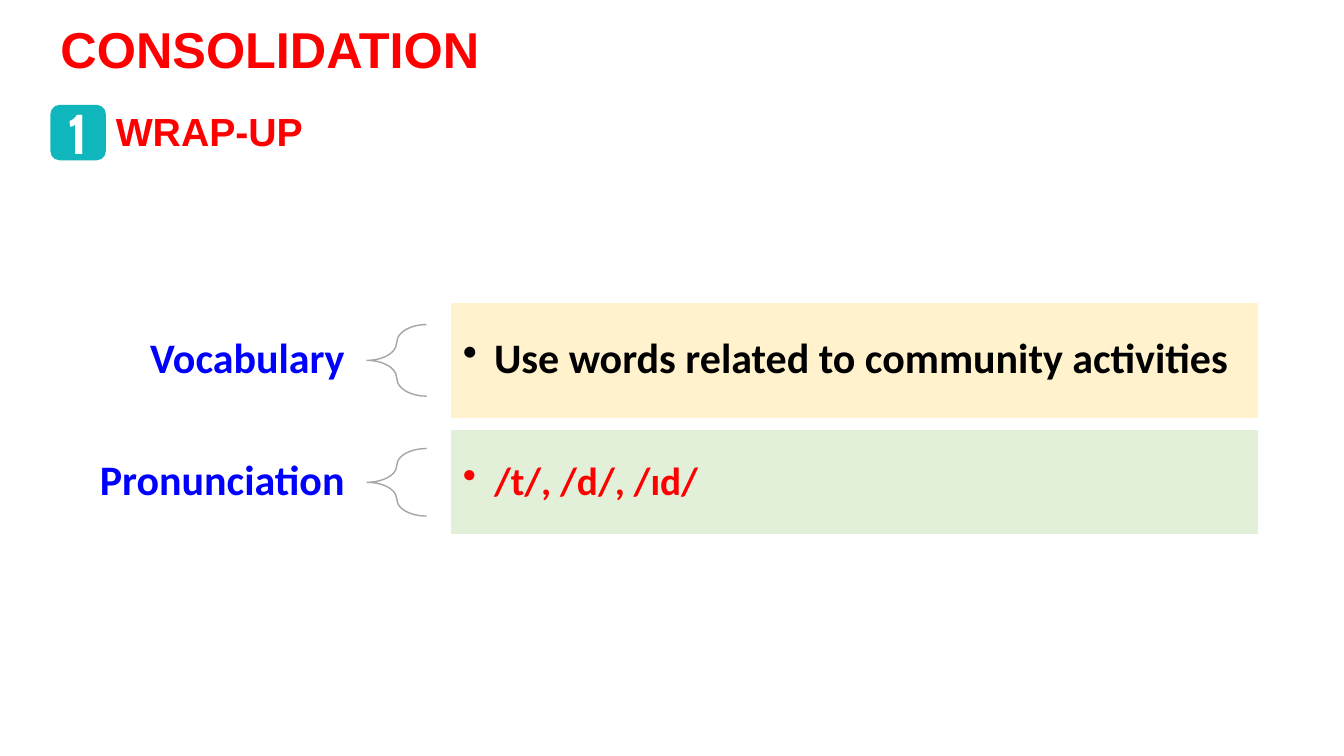
from lxml import etree
from pptx import Presentation
from pptx import util as u
from pptx.dml.color import RGBColor
from pptx.enum import shapes, text
from pptx.oxml.ns import qn

PX = 9144
COLOURS = {
    "red": "FF0000", "blue": "0000FF", "black": "000000", "white": "FFFFFF",
    "teal": "0FB7BD", "grey": "A5A5A5", "cream": "FFF2CC", "mint": "E2F0D9",
}
LEFT, CENTER, RIGHT = text.PP_ALIGN.LEFT, text.PP_ALIGN.CENTER, text.PP_ALIGN.RIGHT
TOP, MIDDLE = text.MSO_ANCHOR.TOP, text.MSO_ANCHOR.MIDDLE


def colour(name):
    return RGBColor.from_string(COLOURS[name])


def write(box, words, size, ink, font="Calibri", align=LEFT, anchor=MIDDLE, inset=(10, 5), spacing=1.0):
    frame = box.text_frame
    side, edge = (length * PX for length in inset)
    frame_format = {
        "word_wrap": True, "auto_size": text.MSO_AUTO_SIZE.NONE, "vertical_anchor": anchor,
        "margin_left": side, "margin_right": side, "margin_top": edge, "margin_bottom": edge,
    }
    for name, value in frame_format.items():
        setattr(frame, name, value)
    para = frame.paragraphs[0]
    para.alignment = align
    para.line_spacing = spacing
    span = para.add_run()
    span.text = words
    for name, value in {"name": font, "size": u.Pt(size), "bold": True}.items():
        setattr(span.font, name, value)
    span.font.color.rgb = colour(ink)
    return para


deck = Presentation()
deck.slide_width, deck.slide_height = 1333 * PX, 750 * PX
page = deck.slides.add_slide(deck.slide_layouts[5])

title = page.shapes.title
for name, value in {"left": 50, "top": 13, "width": 452, "height": 71}.items():
    setattr(title, name, value * PX)
write(title, "CONSOLIDATION", 36, "red", "Arial", anchor=TOP)

heading = page.shapes.add_textbox(105 * PX, 102 * PX, 1183 * PX, 57 * PX)
write(heading, "WRAP-UP", 28, "red", "Arial", anchor=TOP)

badge = page.shapes.add_shape(shapes.MSO_SHAPE.ROUNDED_RECTANGLE, 50 * PX, 104 * PX, 55 * PX, 55 * PX)
badge.shadow.inherit = False
badge.fill.solid()
badge.fill.fore_color.rgb = colour("teal")
badge.line.fill.background()
write(badge, "1", 40, "white", "Cabin", CENTER, inset=(0, 0))

rows = [
    ("Vocabulary", "Use words related to community activities", 30, "black", "cream", 300, 115, 71),
    ("Pronunciation", "/t/, /d/, /ɪd/", 28, "red", "mint", 426, 105, 67),
]
for topic, words, size, ink, tint, top, height, brace_height in rows:
    middle = top + height / 2

    label = page.shapes.add_textbox(70 * PX, int((middle - 32.5) * PX), 295 * PX, 65 * PX)
    write(label, topic, 30, "blue", align=RIGHT, inset=(23, 8), spacing=0.9)

    brace = page.shapes.add_shape(
        shapes.MSO_SHAPE.LEFT_BRACE, 364 * PX, int((middle - brace_height / 2) * PX), 59 * PX, brace_height * PX)
    brace.shadow.inherit = False
    brace.adjustments[0] = 0.35
    brace.fill.background()
    brace.line.color.rgb = colour("grey")
    brace.line.width = u.Pt(1)

    panel = page.shapes.add_shape(shapes.MSO_SHAPE.RECTANGLE, 447 * PX, top * PX, 801 * PX, height * PX)
    panel.shadow.inherit = False
    panel.fill.solid()
    panel.fill.fore_color.rgb = colour(tint)
    panel.line.color.rgb = colour("white")
    panel.line.width = u.Pt(1)
    para = write(panel, words, size, ink, inset=(12, 12), spacing=0.9)
    layout = para._p.get_or_add_pPr()
    layout.set("marL", str(31 * PX))
    layout.set("indent", str(-31 * PX))
    etree.SubElement(layout, qn("a:buChar")).set("char", "•")

deck.save("out.pptx")
